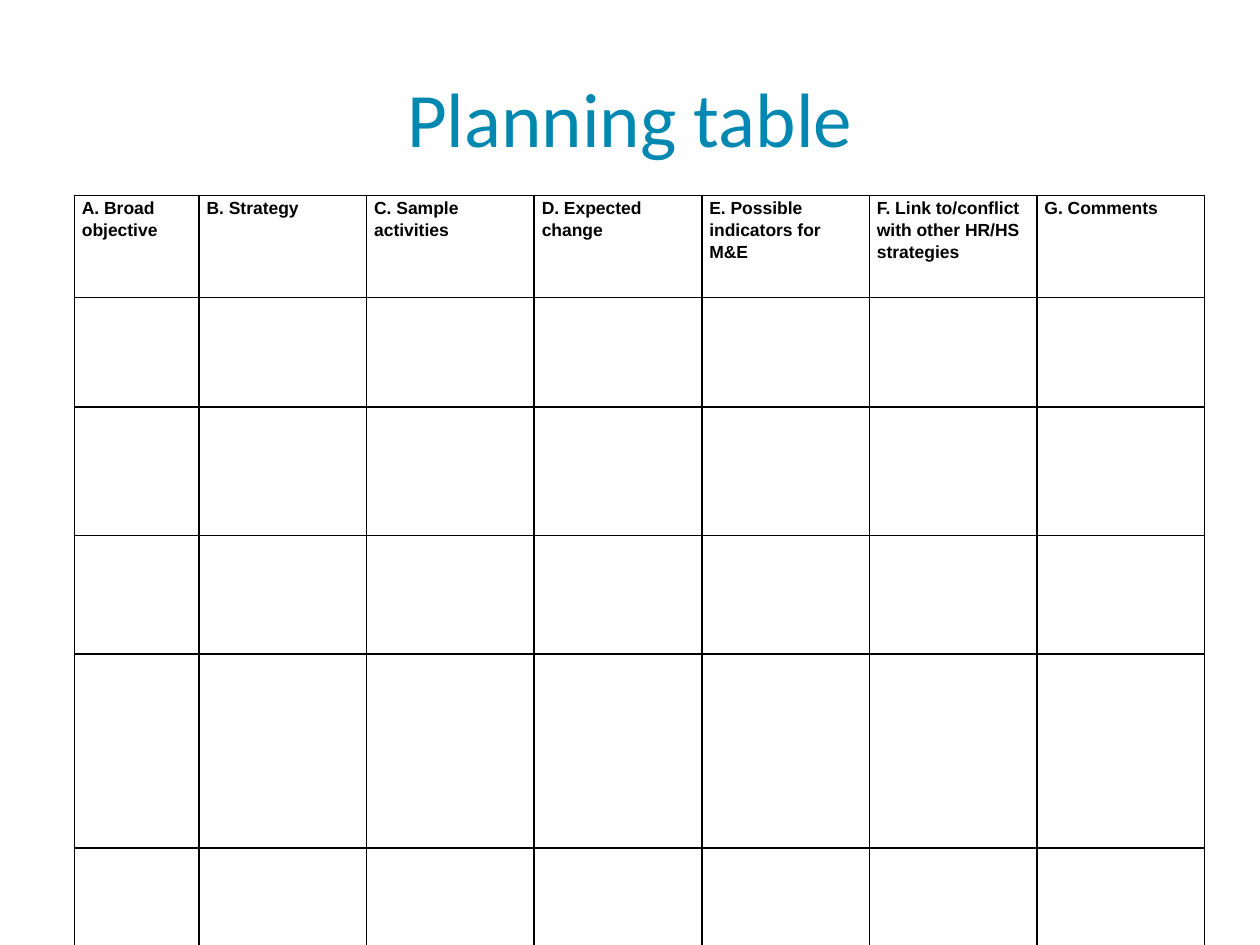
from dataclasses import dataclass

from lxml.etree import SubElement
from pptx import Presentation
from pptx.dml.color import RGBColor
from pptx.enum.text import MSO_ANCHOR, PP_ALIGN
from pptx.oxml.ns import qn
from pptx.slide import Slide
from pptx.table import _Cell
from pptx.text.text import _Paragraph
from pptx.util import Inches, Pt


@dataclass(frozen=True)
class Theme:
    title_font: str = "Calibri"
    table_font: str = "Arial"
    title_size: int = 44
    header_size: int = 10
    border_width: int = 1
    title_color: str = "0088B0"
    ink: str = "000000"


@dataclass(frozen=True)
class Column:
    heading: str
    width: float = 1.33


THEME = Theme()
COLUMNS = [
    Column("A. Broad objective", 0.99),
    Column("B. Strategy"),
    Column("C. Sample activities"),
    Column("D. Expected change"),
    Column("E. Possible indicators for M&E"),
    Column("F. Link to/conflict with other HR/HS strategies"),
    Column("G. Comments"),
]
ROW_HEIGHTS = [0.81, 0.87, 1.02, 0.94, 1.54, 1.54, 0.42]


def add_run(paragraph: _Paragraph, text: str, font: str, size: int, color: str, bold: bool = False) -> None:
    run = paragraph.add_run()
    run.text = text
    run.font.name = font
    run.font.size = Pt(size)
    run.font.bold = bold
    run.font.color.rgb = RGBColor.from_string(color)


def add_title(slide: Slide, text: str) -> None:
    shape = slide.shapes.add_textbox(Inches(0.5), Inches(0.3), Inches(9), Inches(1.25))
    frame = shape.text_frame
    frame.word_wrap = True
    frame.vertical_anchor = MSO_ANCHOR.MIDDLE
    paragraph = frame.paragraphs[0]
    paragraph.alignment = PP_ALIGN.CENTER
    add_run(paragraph, text, THEME.title_font, THEME.title_size, THEME.title_color)


def format_cell(cell: _Cell) -> None:
    cell.margin_left = cell.margin_right = Inches(0.06)
    cell.margin_top = cell.margin_bottom = Inches(0)
    properties = cell._tc.get_or_add_tcPr()
    for side in ("a:lnL", "a:lnR", "a:lnT", "a:lnB"):
        line = SubElement(properties, qn(side), w=str(Pt(THEME.border_width)))
        fill = SubElement(line, qn("a:solidFill"))
        SubElement(fill, qn("a:srgbClr"), val=THEME.ink)
    cell.fill.background()


def write_heading(cell: _Cell, text: str) -> None:
    paragraph = cell.text_frame.paragraphs[0]
    paragraph.line_spacing = 1.15
    paragraph.space_before = Pt(2.8)
    paragraph.space_after = Pt(5.7)
    add_run(paragraph, text, THEME.table_font, THEME.header_size, THEME.ink, bold=True)


def add_planning_table(slide: Slide) -> None:
    width = sum(column.width for column in COLUMNS)
    shape = slide.shapes.add_table(
        len(ROW_HEIGHTS), len(COLUMNS),
        Inches(0.59), Inches(1.55), Inches(width), Inches(sum(ROW_HEIGHTS)),
    )
    table = shape.table
    table.first_row = False
    table.horz_banding = False
    for row, height in zip(table.rows, ROW_HEIGHTS):
        row.height = Inches(height)
    for table_column, column in zip(table.columns, COLUMNS):
        table_column.width = Inches(column.width)
    for cell in table.iter_cells():
        format_cell(cell)
    for index, column in enumerate(COLUMNS):
        write_heading(table.cell(0, index), column.heading)


def main() -> None:
    presentation = Presentation()
    presentation.slide_width = Inches(10)
    presentation.slide_height = Inches(7.5)
    slide = presentation.slides.add_slide(presentation.slide_layouts[6])
    add_title(slide, "Planning table")
    add_planning_table(slide)
    presentation.save("out.pptx")


if __name__ == "__main__":
    main()
